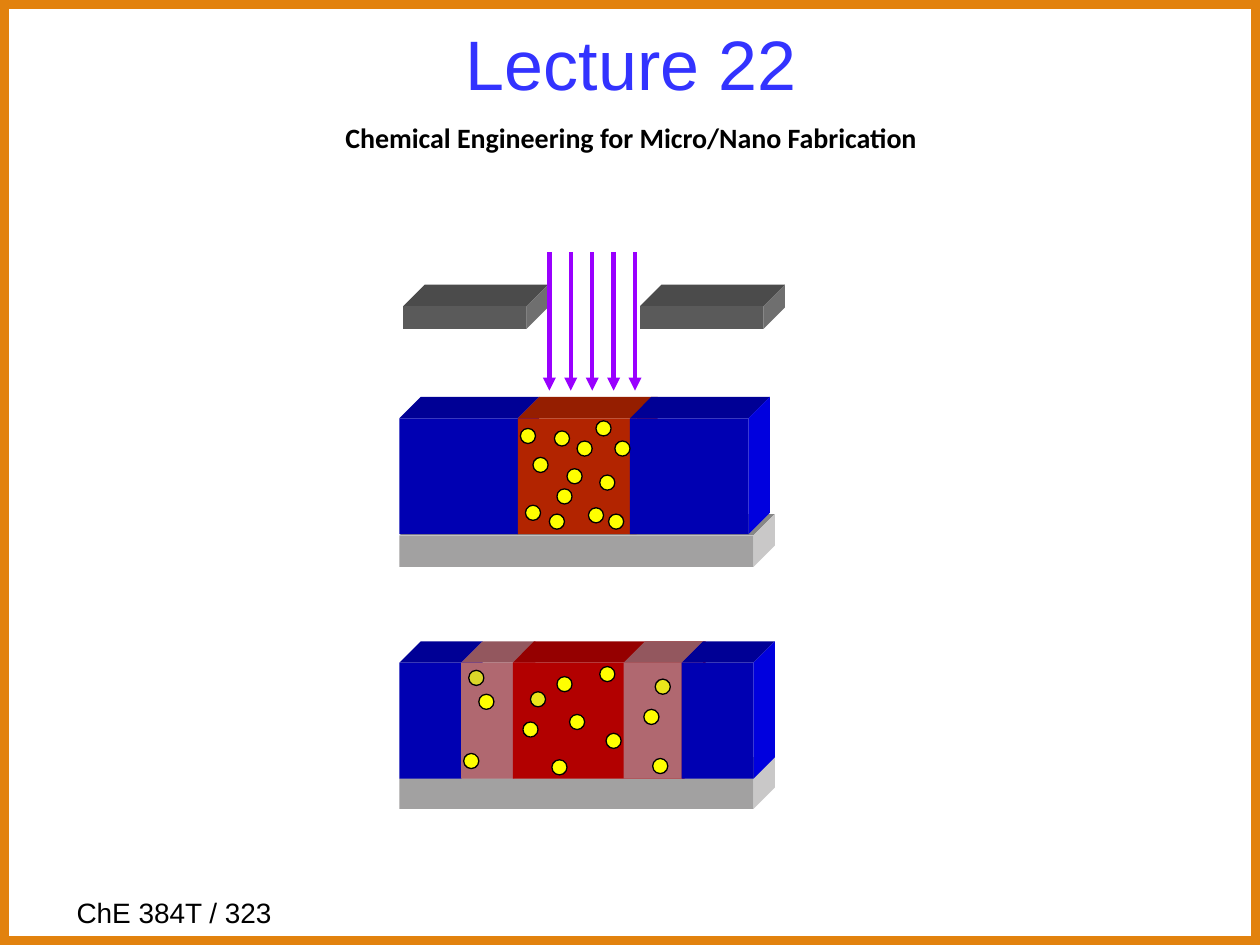
from lxml import etree
from pptx import Presentation
from pptx import util as u
from pptx.dml.color import RGBColor
from pptx.enum import shapes, text
from pptx.oxml import ns

DEPTH = 0.17
DOT_SIZE = 0.12
TOP_SHADE, FRONT_SHADE, SIDE_SHADE = 0.585, 0.7, 0.87
BLUE, ORANGE, RED, PINK = "0000FF", "FF3300", "FF0000", "FC94A0"
GREY, SILVER, YELLOW, BLACK = "808080", "E7E6E6", "FFFF00", "000000"


def colour(value):
    return RGBColor.from_string(value)


def shade(value, factor):
    """Darken a hex colour by a factor."""
    return "".join(f"{round(int(value[i:i + 2], 16) * factor):02X}" for i in (0, 2, 4))


class Diagram:
    def __init__(self, slide, font="Arial", arrow_colour="9900FF"):
        self.slide = slide
        self.font = font
        self.arrow_colour = arrow_colour

    def style(self, shape, fill=None, line=None, line_width=0.75):
        shape.shadow.inherit = False
        if fill:
            shape.fill.solid()
            shape.fill.fore_color.rgb = colour(fill)
        else:
            shape.fill.background()
        if line:
            shape.line.color.rgb = colour(line)
            shape.line.width = u.Pt(line_width)
        else:
            shape.line.fill.background()

    def preset(self, kind, left, top, width, height, **look):
        shape = self.slide.shapes.add_shape(kind, *map(u.Inches, (left, top, width, height)))
        self.style(shape, **look)

    def face(self, points, fill):
        corners = [(u.Inches(x), u.Inches(y)) for x, y in points]
        builder = self.slide.shapes.build_freeform(*corners[0], scale=1.0)
        builder.add_line_segments(corners[1:], close=True)
        self.style(builder.convert_to_shape(), fill)

    def block(self, left, top, width, height, fill):
        """Draw a box seen from the upper right."""
        right, bottom = left + width, top + height
        self.face([(left, top), (left + DEPTH, top - DEPTH),
                   (right + DEPTH, top - DEPTH), (right, top)], shade(fill, TOP_SHADE))
        self.face([(right, top), (right + DEPTH, top - DEPTH),
                   (right + DEPTH, bottom - DEPTH), (right, bottom)], shade(fill, SIDE_SHADE))
        self.preset(shapes.MSO_SHAPE.RECTANGLE, left, top, width, height,
                    fill=shade(fill, FRONT_SHADE))

    def dots(self, positions, fill=YELLOW):
        for left, top in positions:
            self.preset(shapes.MSO_SHAPE.OVAL, left, top, DOT_SIZE, DOT_SIZE,
                        fill=fill, line=BLACK)

    def arrow(self, x, top, bottom):
        connector = self.slide.shapes.add_connector(
            shapes.MSO_CONNECTOR.STRAIGHT, *map(u.Inches, (x, top, x, bottom)))
        connector.line.color.rgb = colour(self.arrow_colour)
        connector.line.width = u.Pt(2.5)
        properties = connector._element.spPr
        etree.SubElement(properties.find(ns.qn("a:ln")), ns.qn("a:tailEnd"), type="triangle")
        etree.SubElement(properties, ns.qn("a:effectLst"))

    def label(self, content, left, top, width, height, size=16, font=None, fill=BLACK,
              bold=False, align=text.PP_ALIGN.CENTER, anchor=text.MSO_ANCHOR.TOP, spacing=0.9):
        box = self.slide.shapes.add_textbox(*map(u.Inches, (left, top, width, height)))
        frame = box.text_frame
        frame.word_wrap = True
        frame.vertical_anchor = anchor
        paragraph = frame.paragraphs[0]
        paragraph.alignment = align
        paragraph.line_spacing = spacing
        run = paragraph.add_run()
        run.text = content
        run.font.name = font or self.font
        run.font.size = u.Pt(size)
        run.font.bold = bold
        run.font.color.rgb = colour(fill)


def draw_exposure(diagram):
    """Light passes the mask and frees acid in the middle of the film."""
    film_top, film_height = 3.32, 0.92
    diagram.block(3.17, 4.25, 2.81, 0.25, SILVER)
    for left, fill in ((3.17, BLUE), (4.11, ORANGE), (5, BLUE)):
        diagram.block(left, film_top, 0.94, film_height, fill)
    diagram.block(3.2, 2.43, 0.98, 0.18, GREY)
    for i in range(5):
        diagram.arrow(4.36 + 0.17 * i, 2, 3.1)
    diagram.block(5.08, 2.43, 0.98, 0.18, GREY)
    diagram.dots([(4.13, 3.4), (4.67, 4.03), (4.73, 3.34), (4.76, 3.77), (4.23, 3.63),
                  (4.17, 4.01), (4.4, 3.42), (4.5, 3.72), (4.36, 4.08), (4.88, 3.5),
                  (4.83, 4.08), (4.58, 3.5), (4.42, 3.88)])


def draw_diffusion(diagram):
    """Acid spreads sideways into the unexposed film."""
    film_top, film_height = 5.26, 0.92
    diagram.block(3.17, 6.18, 2.81, 0.24, SILVER)
    for left, width, fill in ((3.17, 0.49, BLUE), (3.66, 0.42, PINK), (4.07, 1.36, RED),
                              (4.95, 0.46, PINK), (5.41, 0.57, BLUE)):
        diagram.block(left, film_top, width, film_height, fill)
    diagram.dots([(3.8, 5.51), (5.18, 6.02), (4.76, 5.29), (4.81, 5.82), (4.15, 5.73),
                  (3.68, 5.98), (4.42, 5.37), (4.52, 5.67), (4.38, 6.03), (5.11, 5.63)])
    diagram.dots([(5.2, 5.39), (4.21, 5.49)], fill="EAE51B")
    diagram.dots([(3.72, 5.32)], fill="DBD729")


def main():
    presentation = Presentation()
    presentation.slide_width, presentation.slide_height = u.Inches(10), u.Inches(7.5)
    diagram = Diagram(presentation.slides.add_slide(presentation.slide_layouts[6]))
    diagram.label("ChE 384T / 323", 0.51, 7.06, 2.86, 0.37,
                  align=text.PP_ALIGN.LEFT, spacing=1.0)
    diagram.preset(shapes.MSO_SHAPE.RECTANGLE, 0, 0, 10, 7.5, line="E2820E", line_width=10)
    diagram.label("Lecture 22", 0.76, -0.04, 8.5, 0.93, size=40, fill="3333FF",
                  anchor=text.MSO_ANCHOR.BOTTOM)
    diagram.label("Chemical Engineering for Micro/Nano Fabrication", 1.26, 0.94, 7.5, 0.47,
                  font="Calibri", bold=True)
    draw_exposure(diagram)
    draw_diffusion(diagram)
    presentation.save("out.pptx")


if __name__ == "__main__":
    main()
